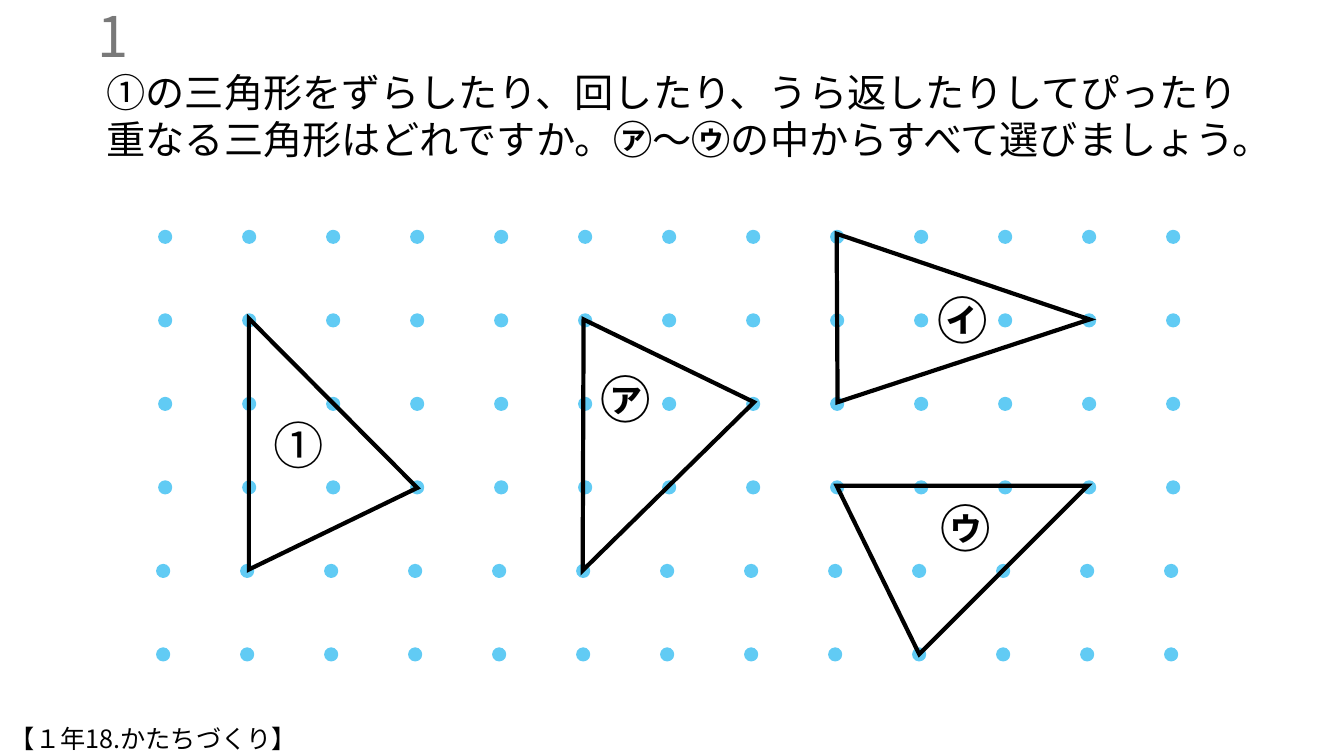
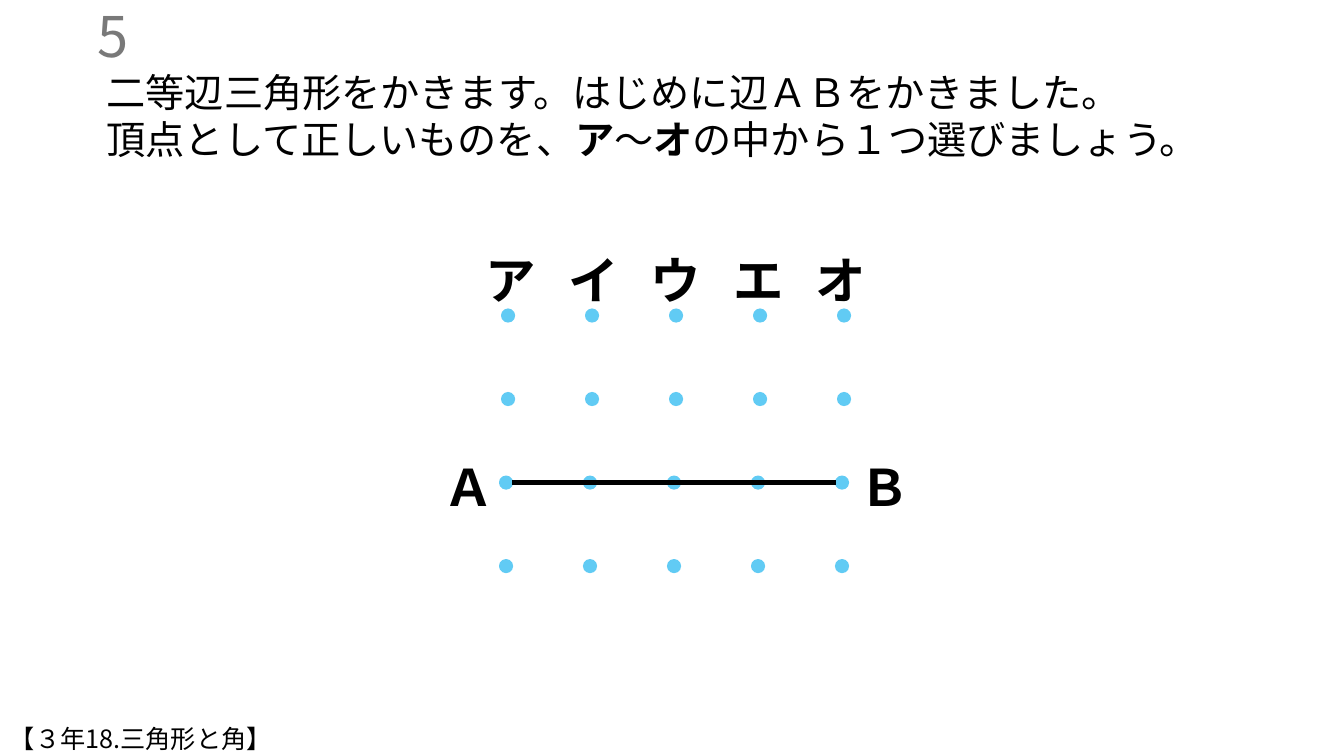
from dataclasses import dataclass

from lxml.etree import SubElement
from pptx import Presentation
from pptx.dml.color import RGBColor
from pptx.enum.lang import MSO_LANGUAGE_ID
from pptx.enum.shapes import MSO_CONNECTOR, MSO_SHAPE
from pptx.enum.text import MSO_ANCHOR, PP_ALIGN
from pptx.oxml.ns import qn
from pptx.slide import Slide
from pptx.util import Pt

BLACK = RGBColor(0x00, 0x00, 0x00)
GRAY = RGBColor(0x79, 0x79, 0x79)
DOT_BLUE = RGBColor(0x61, 0xCB, 0xF4)

FONT = "Noto Sans CJK JP"
LINE_HEIGHT = 1.2  # of the text size
TEXT_DROP = 0.09  # of the text size
INSET = 3.6
DOT_SIZE = 8.6
COLUMN_GAP, ROW_GAP = 60, 59.65
ROW_SHIFT = -1.44  # the last two rows sit slightly to the left
LABEL_WIDTH, LABEL_HEIGHT = 46, 51

Point = tuple[float, float]


@dataclass(frozen=True)
class Words:
    text: str
    bold: bool = False


@dataclass(frozen=True)
class TextStyle:
    size: float
    color: RGBColor = BLACK
    align: PP_ALIGN = PP_ALIGN.LEFT
    anchor: MSO_ANCHOR = MSO_ANCHOR.TOP


@dataclass(frozen=True)
class Box:
    left: float
    top: float
    width: float
    height: float


@dataclass(frozen=True)
class DotGrid:
    x: float
    y: float
    columns: int
    rows: int


@dataclass(frozen=True)
class Label:
    words: Words
    left: float
    top: float


@dataclass(frozen=True)
class Question:
    number: str
    lines: list[list[Words]]
    unit: str
    grid: DotGrid
    labels: list[Label]
    triangles: list[list[Point]]
    sides: list[tuple[Point, Point]]


QUESTION_STYLE = TextStyle(28)
NUMBER_STYLE = TextStyle(40, GRAY, PP_ALIGN.RIGHT, MSO_ANCHOR.MIDDLE)
LABEL_STYLE = TextStyle(36)
UNIT_STYLE = TextStyle(18)

QUESTION_BOX = Box(69.1, 42.5, 830.2, 74.9)
NUMBER_BOX = Box(0, 7.2, 98.6, 28.8)
UNIT_BOX = Box(0, 511.2, 539.3, 28.8)


def add_text(slide: Slide, box: Box, lines: list[list[Words]], style: TextStyle) -> None:
    frame = slide.shapes.add_textbox(
        Pt(box.left), Pt(box.top), Pt(box.width), Pt(box.height)).text_frame
    frame.word_wrap = True
    frame.vertical_anchor = style.anchor
    drop = TEXT_DROP * style.size
    if style.anchor == MSO_ANCHOR.MIDDLE:
        drop *= 2
    frame.margin_top, frame.margin_bottom = Pt(INSET + drop), Pt(INSET)
    for index, line in enumerate(lines):
        paragraph = frame.add_paragraph() if index else frame.paragraphs[0]
        paragraph.alignment = style.align
        paragraph.line_spacing = Pt(LINE_HEIGHT * style.size)
        for words in line:
            run = paragraph.add_run()
            run.text = words.text
            run.font.size = Pt(style.size)
            run.font.bold = words.bold
            run.font.color.rgb = style.color
            run.font.name = FONT
            run.font.language_id = MSO_LANGUAGE_ID.JAPANESE
            SubElement(run.font._element, qn("a:ea"), typeface=FONT)


def add_dots(slide: Slide, grid: DotGrid) -> None:
    for row in range(grid.rows):
        shift = ROW_SHIFT if row >= grid.rows - 2 else 0
        for column in range(grid.columns):
            dot = slide.shapes.add_shape(
                MSO_SHAPE.OVAL,
                Pt(grid.x + shift + column * COLUMN_GAP - DOT_SIZE / 2),
                Pt(grid.y + row * ROW_GAP - DOT_SIZE / 2),
                Pt(DOT_SIZE), Pt(DOT_SIZE))
            dot.shadow.inherit = False
            dot.fill.solid()
            dot.fill.fore_color.rgb = DOT_BLUE
            dot.line.color.rgb = DOT_BLUE
            dot.line.width = Pt(1.5)


def add_triangle(slide: Slide, corners: list[Point]) -> None:
    first, *others = [(Pt(x), Pt(y)) for x, y in corners]
    builder = slide.shapes.build_freeform(*first)
    builder.add_line_segments(others, close=True)
    triangle = builder.convert_to_shape()
    triangle.shadow.inherit = False
    triangle.fill.background()
    triangle.line.color.rgb = BLACK
    triangle.line.width = Pt(3)
    SubElement(triangle.line._get_or_add_ln(), qn("a:miter"), lim="800000")


def add_side(slide: Slide, start: Point, end: Point) -> None:
    side = slide.shapes.add_connector(
        MSO_CONNECTOR.STRAIGHT, *(Pt(value) for value in (*start, *end)))
    side.line.color.rgb = BLACK
    side.line.width = Pt(3)
    SubElement(side._element.spPr, qn("a:effectLst"))


def draw_question(slide: Slide, question: Question) -> None:
    # Question text and number
    add_text(slide, QUESTION_BOX, question.lines, QUESTION_STYLE)
    add_text(slide, NUMBER_BOX, [[Words(question.number)]], NUMBER_STYLE)
    # Figure
    add_dots(slide, question.grid)
    for corners in question.triangles:
        add_triangle(slide, corners)
    for start, end in question.sides:
        add_side(slide, start, end)
    for label in question.labels:
        box = Box(label.left, label.top, LABEL_WIDTH, LABEL_HEIGHT)
        add_text(slide, box, [[label.words]], LABEL_STYLE)
    # Footer with the school unit
    add_text(slide, UNIT_BOX, [[Words(question.unit)]], UNIT_STYLE)


MATCHING_TRIANGLES = Question(
    number="1",
    lines=[[
        Words("①の三角形をずらしたり、回したり、うら返したりしてぴったり重なる三角形はどれですか。"),
        Words("㋐", True), Words("～"), Words("㋒", True),
        Words("の中からすべて選びましょう。"),
    ]],
    unit="【１年18.かたちづくり】",
    grid=DotGrid(118, 169.2, columns=13, rows=6),
    labels=[
        Label(Words("①"), 188.6, 288.7),
        Label(Words("㋐", True), 421.9, 256.3),
        Label(Words("㋑", True), 662.4, 199.4),
        Label(Words("㋒", True), 664.6, 348.5),
    ],
    triangles=[
        [(177.8, 227.5), (177.8, 406.8), (298.1, 348.5)],
        [(776.9, 347), (597.6, 347), (656.6, 467.3)],
        [(416.9, 228.2), (416.2, 407.5), (538.6, 287.3)],
        [(597.6, 167), (598.3, 287.3), (778.3, 228.2)],
    ],
    sides=[],
)

ISOSCELES_TRIANGLE = Question(
    number="5",
    lines=[
        [Words("二等辺三角形をかきます。はじめに辺ＡＢをかきました。")],
        [Words("頂点として正しいものを、"), Words("ア", True), Words("～"),
         Words("オ", True), Words("の中から１つ選びましょう。")],
    ],
    unit="【３年18.三角形と角】",
    grid=DotGrid(362.9, 225.4, columns=5, rows=4),
    labels=[
        Label(Words("Ａ", True), 309.6, 319),
        Label(Words("Ｂ", True), 607, 319),
        *(Label(Words(kana, True), 339.8 + 58.9 * index, 171.4)
          for index, kana in enumerate("アイウエオ")),
    ],
    triangles=[],
    sides=[((365.8, 344.7), (596.9, 344.7))],
)


def main() -> None:
    deck = Presentation()
    deck.slide_width, deck.slide_height = Pt(960), Pt(540)
    blank_layout = deck.slide_layouts[6]
    for question in (MATCHING_TRIANGLES, ISOSCELES_TRIANGLE):
        draw_question(deck.slides.add_slide(blank_layout), question)
    deck.save("out.pptx")


if __name__ == "__main__":
    main()
